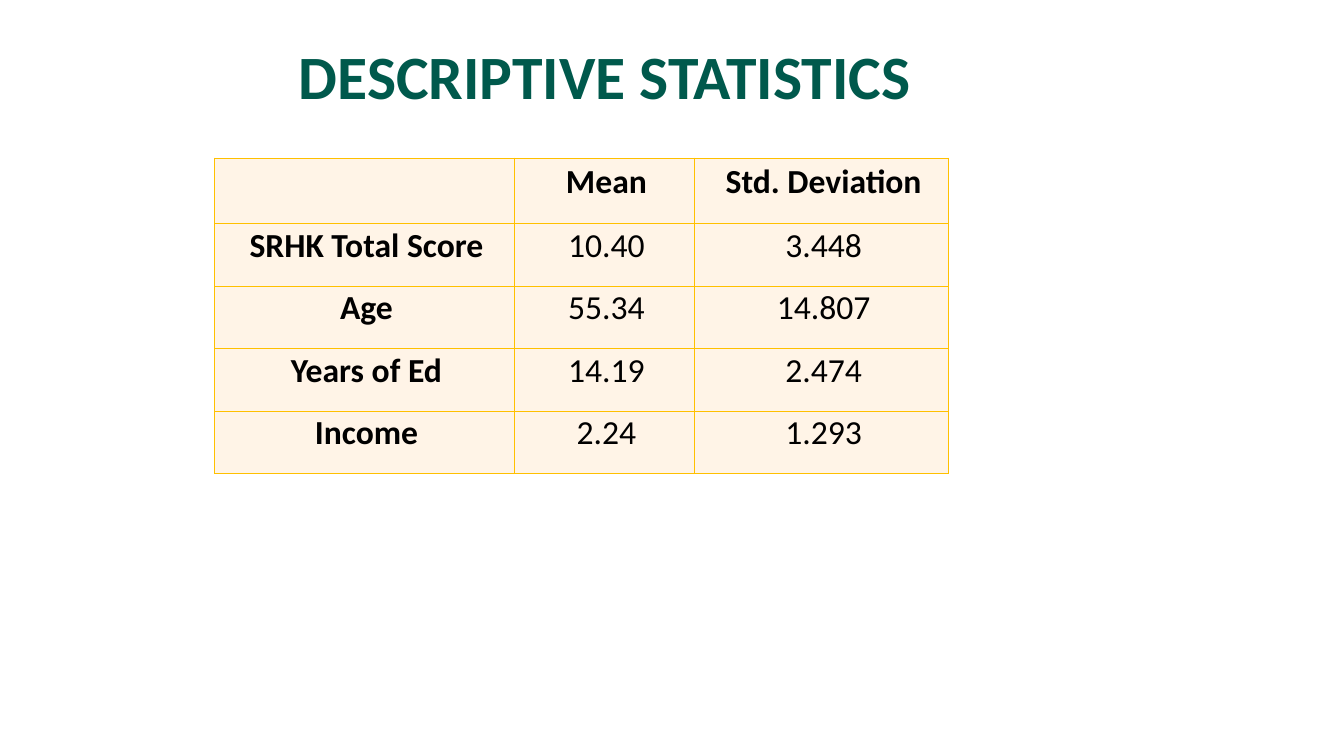
from lxml.etree import SubElement
from pptx import Presentation
from pptx.dml.color import RGBColor
from pptx.enum.text import MSO_ANCHOR, PP_ALIGN
from pptx.oxml.ns import qn
from pptx.util import Inches, Pt


def color(hex_value):
    return RGBColor.from_string(hex_value)


def format_text(paragraph, spacing, hex_value, **font_values):
    paragraph.alignment = PP_ALIGN.CENTER
    paragraph.line_spacing = spacing
    font = paragraph.runs[0].font
    font.color.rgb = color(hex_value)
    for attribute, value in font_values.items():
        setattr(font, attribute, value)


statistics = [
    ("", "Mean", "Std. Deviation"),
    ("SRHK Total Score", "10.40", "3.448"),
    ("Age", "55.34", "14.807"),
    ("Years of Ed", "14.19", "2.474"),
    ("Income", "2.24", "1.293"),
]
column_widths = [2.97, 1.79, 2.52]
row_heights = [0.65] + [0.62] * (len(statistics) - 1)
cell_format = {
    "margin_left": 0,
    "margin_right": 0,
    "margin_top": 0,
    "margin_bottom": 0,
    "vertical_anchor": MSO_ANCHOR.MIDDLE,
}

presentation = Presentation()
presentation.slide_width = Inches(13.33)
presentation.slide_height = Inches(7.5)
slide = presentation.slides.add_slide(presentation.slide_layouts[5])

heading = slide.shapes.title
heading_place = {"left": 0.25, "top": 0.06, "width": 11.5, "height": 1.45}
for attribute, inches in heading_place.items():
    setattr(heading, attribute, Inches(inches))
heading.text_frame.text = "DESCRIPTIVE STATISTICS"
heading.text_frame.vertical_anchor = MSO_ANCHOR.MIDDLE
format_text(heading.text_frame.paragraphs[0], 0.9, "00594C",
            name="Calibri", size=Pt(44), bold=True)

summary = slide.shapes.add_table(
    len(statistics), len(column_widths), Inches(2.13), Inches(1.57),
    Inches(sum(column_widths)), Inches(sum(row_heights))).table
for column, width in zip(summary.columns, column_widths):
    column.width = Inches(width)
for row, height in zip(summary.rows, row_heights):
    row.height = Inches(height)

for row_index, values in enumerate(statistics):
    for column_index, value in enumerate(values):
        cell = summary.cell(row_index, column_index)
        for attribute, setting in cell_format.items():
            setattr(cell, attribute, setting)
        cell_properties = cell._tc.get_or_add_tcPr()
        for side in ("a:lnL", "a:lnR", "a:lnT", "a:lnB"):
            border = SubElement(cell_properties, qn(side), w=str(Pt(1)))
            border_fill = SubElement(border, qn("a:solidFill"))
            SubElement(border_fill, qn("a:srgbClr"), val="FFC000")
        cell.fill.solid()
        cell.fill.fore_color.rgb = color("FFF4E7")
        if value:
            cell.text = value
            paragraph = cell.text_frame.paragraphs[0]
            paragraph._p.get_or_add_pPr().set("marL", str(Inches(0.04)))
            format_text(paragraph, Pt(16), "000000", name="Calibri", size=Pt(24),
                        bold=row_index == 0 or column_index == 0)

presentation.save("out.pptx")
